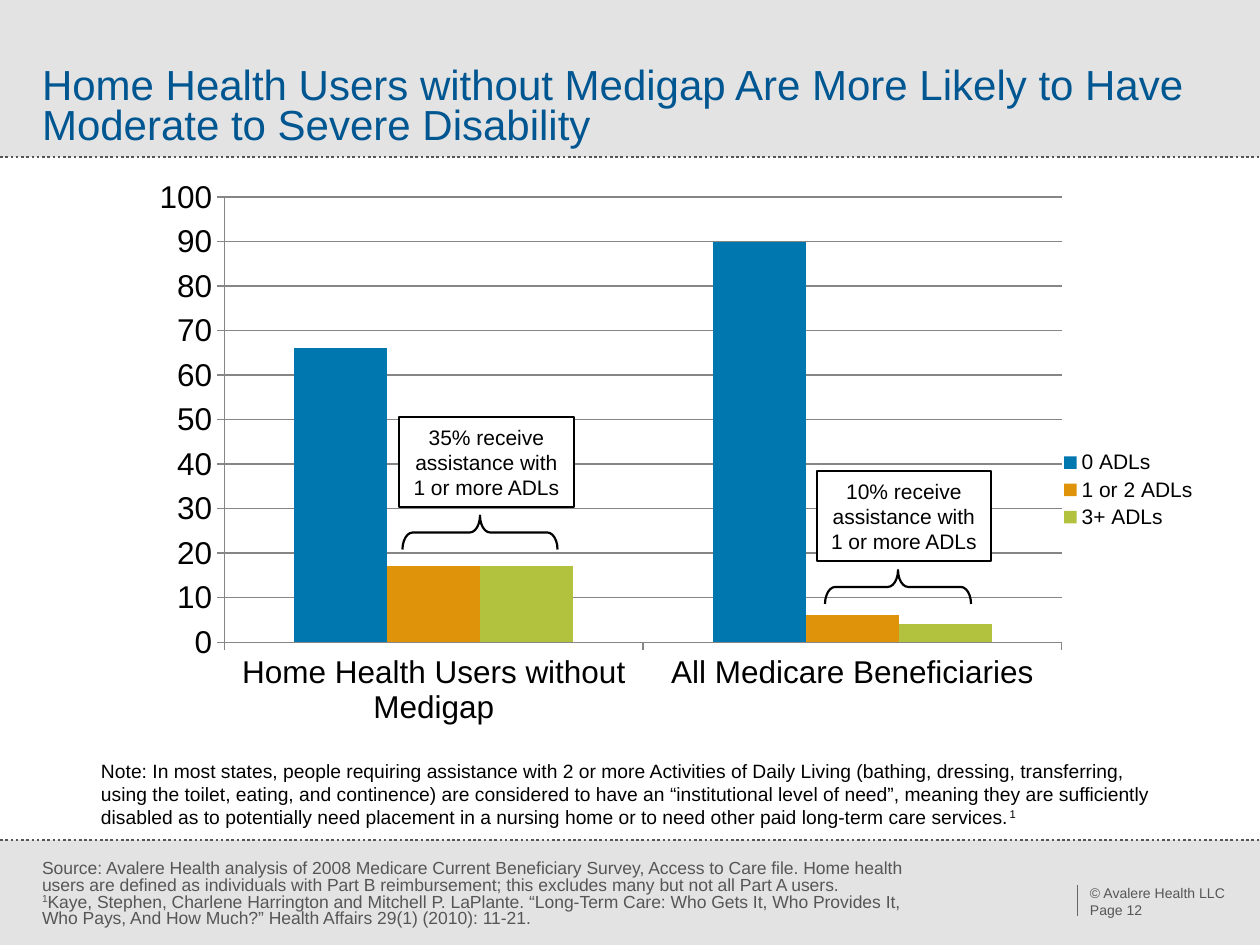
from lxml import etree
from pptx import Presentation
from pptx.chart.data import CategoryChartData
from pptx.dml.color import RGBColor
from pptx.enum.chart import XL_CHART_TYPE, XL_LEGEND_POSITION, XL_TICK_MARK
from pptx.enum.dml import MSO_LINE
from pptx.enum.shapes import MSO_CONNECTOR, MSO_SHAPE
from pptx.enum.text import MSO_ANCHOR, PP_ALIGN
from pptx.oxml import parse_xml
from pptx.oxml.ns import nsdecls, qn
from pptx.util import Pt

PX = 914400 // 126
WIDTH, HEIGHT = 1260, 945
FONT = "Arial"

BAND = RGBColor(0xE3, 0xE3, 0xE3)
GREY = RGBColor(0x56, 0x56, 0x56)
RULE_GREY = RGBColor(0x66, 0x66, 0x66)
GRID_GREY = RGBColor(0x86, 0x86, 0x86)
TITLE_BLUE = RGBColor(0x00, 0x56, 0x91)
BLACK = RGBColor(0, 0, 0)
WHITE = RGBColor(0xFF, 0xFF, 0xFF)

TITLE = "Home Health Users without Medigap Are More Likely to Have Moderate to Severe Disability"
CATEGORIES = ["Home Health Users without Medigap", "All Medicare Beneficiaries"]
SERIES = [
    ("0 ADLs", (66, 90), RGBColor(0x00, 0x77, 0xAE)),
    ("1 or 2 ADLs", (17, 6), RGBColor(0xDF, 0x93, 0x0B)),
    ("3+ ADLs", (17, 4), RGBColor(0xB2, 0xC2, 0x3E)),
]
PLOT_AREA = {"x": 0.149, "y": 0.048, "w": 0.723, "h": 0.687}

# Paragraphs are lists of (text, is superscript)
NOTE = [[
    ("Note: In most states, people requiring assistance with 2 or more Activities of Daily Living "
     "(bathing, dressing, transferring, using the toilet, eating, and continence) are considered to "
     "have an “institutional level of need”, meaning they are sufficiently disabled as to potentially "
     "need placement in a nursing home or to need other paid long-term care services.", False),
    ("1", True),
]]
SOURCE = [
    [("Source: Avalere Health analysis of 2008 Medicare Current Beneficiary Survey, Access to Care "
      "file. Home health users are defined as individuals with Part B reimbursement; this excludes "
      "many but not all Part A users.", False)],
    [("1", True),
     ("Kaye, Stephen, Charlene Harrington and Mitchell P. LaPlante. “Long-Term Care: Who Gets It, "
      "Who Provides It, Who Pays, And How Much?” Health Affairs 29(1) (2010): 11-21.", False)],
]
COPYRIGHT = [[("© Avalere Health LLC\vPage 12", False)]]

BANDS = [(0, 0, WIDTH, 157), (0, 840, WIDTH, 105)]
# start, end, colour, width in points, dash
RULES = [
    ((0, 840), (WIDTH, 840), GREY, 1.5, MSO_LINE.ROUND_DOT),
    ((0, 157), (WIDTH, 157), GREY, 1.5, MSO_LINE.ROUND_DOT),
    ((1077, 885), (1077, 916), RULE_GREY, 0.5, None),
]
# label, label box, brace centre, brace span
CALLOUTS = [
    ("35% receive assistance with 1 or more ADLs", (399, 417, 175, 90), (480, 532), 155),
    ("10% receive assistance with 1 or more ADLs", (817, 471, 174, 90), (898, 587), 146),
]
BRACE_DEPTH = 34


def emu(*lengths):
    return [length * PX for length in lengths]


def style_font(font, size, color):
    font.name = FONT
    font.size = Pt(size)
    font.color.rgb = color


def add_shape(slide, preset, box, fill=None, line=None, line_width=0.75):
    shape = slide.shapes.add_shape(preset, *emu(*box))
    shape.shadow.inherit = False
    if fill is None:
        shape.fill.background()
    else:
        shape.fill.solid()
        shape.fill.fore_color.rgb = fill
    if line is None:
        shape.line.fill.background()
    else:
        shape.line.color.rgb = line
        shape.line.width = Pt(line_width)
    return shape


def add_rule(slide, start, end, color, width, dash):
    rule = slide.shapes.add_connector(MSO_CONNECTOR.STRAIGHT, *emu(*start, *end))
    rule.line.color.rgb = color
    rule.line.width = Pt(width)
    if dash is not None:
        rule.line.dash_style = dash
    etree.SubElement(rule._element.spPr, qn("a:effectLst"))


def set_insets(text_frame, left, top, right, bottom):
    text_frame.margin_left, text_frame.margin_top = emu(left, top)
    text_frame.margin_right, text_frame.margin_bottom = emu(right, bottom)


def add_text(slide, box, paragraphs, size, color, insets, line_spacing=1.0):
    text_frame = slide.shapes.add_textbox(*emu(*box)).text_frame
    text_frame.word_wrap = True
    set_insets(text_frame, *insets)
    text_frame.text = "\n".join("" for _ in paragraphs)
    for paragraph, pieces in zip(text_frame.paragraphs, paragraphs):
        paragraph.line_spacing = line_spacing
        for text, superscript in pieces:
            # A vertical tab marks a line break
            for index, part in enumerate(text.split("\v")):
                if index:
                    paragraph.add_line_break()
                run = paragraph.add_run()
                run.text = part
                style_font(run.font, size, color)
                if superscript:
                    run.font._element.set("baseline", "30000")


def add_title(slide):
    title = slide.shapes.title
    title.left, title.top, title.width, title.height = emu(42, 67, 1176, 82)
    text_frame = title.text_frame
    text_frame.text = TITLE
    text_frame.word_wrap = True
    text_frame.vertical_anchor = MSO_ANCHOR.BOTTOM
    set_insets(text_frame, 0, 0, 12, 0)
    paragraph = text_frame.paragraphs[0]
    paragraph.alignment = PP_ALIGN.LEFT
    paragraph.line_spacing = 0.8
    style_font(paragraph.runs[0].font, 24, TITLE_BLUE)
    # Bring the title in front of the header band
    slide.shapes._spTree.append(title._element)


def add_disability_chart(slide):
    data = CategoryChartData()
    data.categories = CATEGORIES
    for name, values, _ in SERIES:
        data.add_series(name, values)
    chart = slide.shapes.add_chart(
        XL_CHART_TYPE.COLUMN_CLUSTERED, *emu(52, 166, 1158, 648), data).chart
    style_font(chart.font, 18, BLACK)
    chart.has_title = False
    chart.has_legend = True
    chart.legend.position = XL_LEGEND_POSITION.RIGHT
    chart.legend.include_in_layout = False
    style_font(chart.legend.font, 12, BLACK)

    plot = chart.plots[0]
    plot.gap_width = 150
    plot.overlap = 0
    plot.vary_by_categories = False
    for series, (_, _, color) in zip(plot.series, SERIES):
        series.format.fill.solid()
        series.format.fill.fore_color.rgb = color

    value_axis = chart.value_axis
    value_axis.minimum_scale, value_axis.maximum_scale = 0, 100
    value_axis.major_unit = 10
    value_axis.has_major_gridlines = True
    value_axis.major_gridlines.format.line.color.rgb = GRID_GREY
    for axis in (chart.category_axis, value_axis):
        axis.major_tick_mark = XL_TICK_MARK.OUTSIDE
        axis.format.line.color.rgb = GRID_GREY

    plot_area = chart._chartSpace.chart.plotArea
    for layout in plot_area.findall(qn("c:layout")):
        plot_area.remove(layout)
    modes = "".join(f'<c:{side}Mode val="edge"/>' for side in "xy")
    sizes = "".join(f'<c:{key} val="{value}"/>' for key, value in PLOT_AREA.items())
    plot_area.insert(0, parse_xml(
        f'<c:layout {nsdecls("c")}><c:manualLayout><c:layoutTarget val="inner"/>'
        f"{modes}{sizes}</c:manualLayout></c:layout>"))


def add_callout(slide, label, box, centre, span):
    x, y = centre
    brace = add_shape(slide, MSO_SHAPE.LEFT_BRACE,
                      (x - BRACE_DEPTH // 2, y - span // 2, BRACE_DEPTH, span),
                      line=BLACK, line_width=1.25)
    brace.adjustments[0] = 0.3
    brace.rotation = 90

    text_frame = add_shape(slide, MSO_SHAPE.RECTANGLE, box, WHITE, BLACK).text_frame
    text_frame.word_wrap = True
    text_frame.text = label
    paragraph = text_frame.paragraphs[0]
    paragraph.alignment = PP_ALIGN.CENTER
    style_font(paragraph.runs[0].font, 12, BLACK)


def main():
    presentation = Presentation()
    presentation.slide_width, presentation.slide_height = emu(WIDTH, HEIGHT)
    slide = presentation.slides.add_slide(presentation.slide_layouts[5])
    for band in BANDS:
        add_shape(slide, MSO_SHAPE.RECTANGLE, band, BAND)
    for rule in RULES:
        add_rule(slide, *rule)
    add_text(slide, (1077, 885, 168, 40), COPYRIGHT, 8, GREY, (13, 0, 13, 6))
    add_title(slide)
    add_disability_chart(slide)
    add_text(slide, (42, 861, 892, 84), SOURCE, 10, GREY, (0, 0, 0, 0), 0.8)
    add_text(slide, (88, 753, 1090, 93), NOTE, 11, BLACK, (13, 6, 13, 6))
    for callout in CALLOUTS:
        add_callout(slide, *callout)
    presentation.save("out.pptx")


if __name__ == "__main__":
    main()
